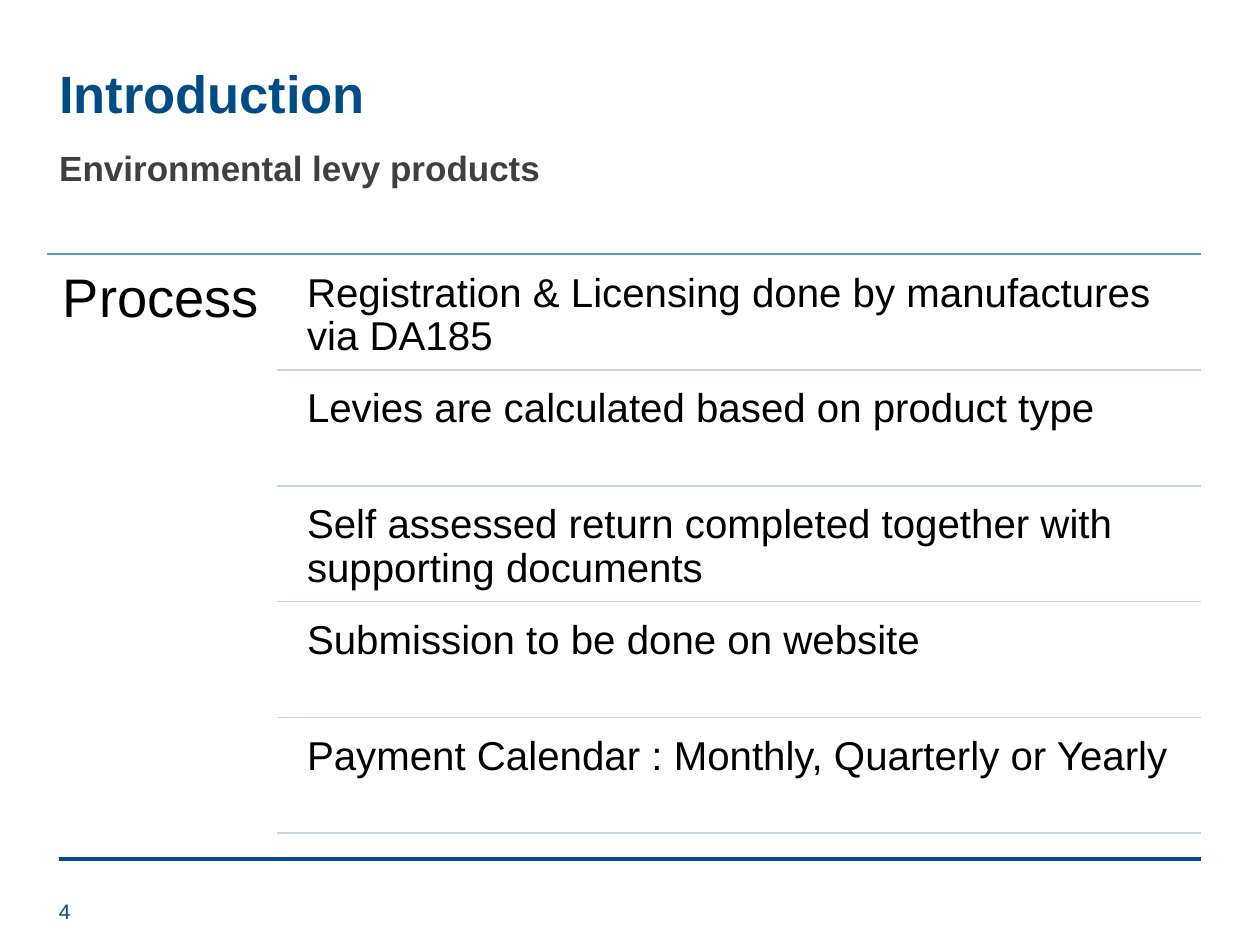
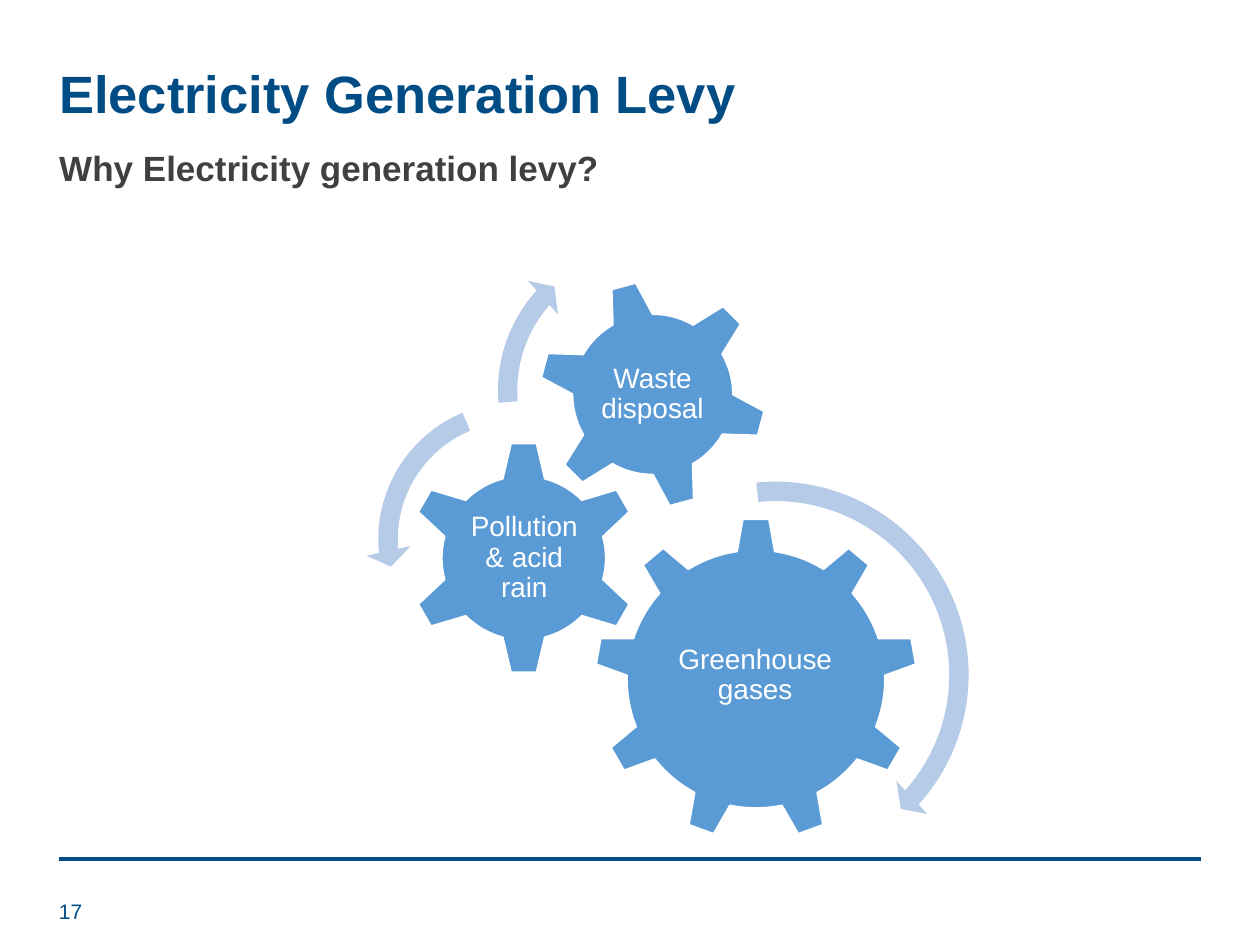
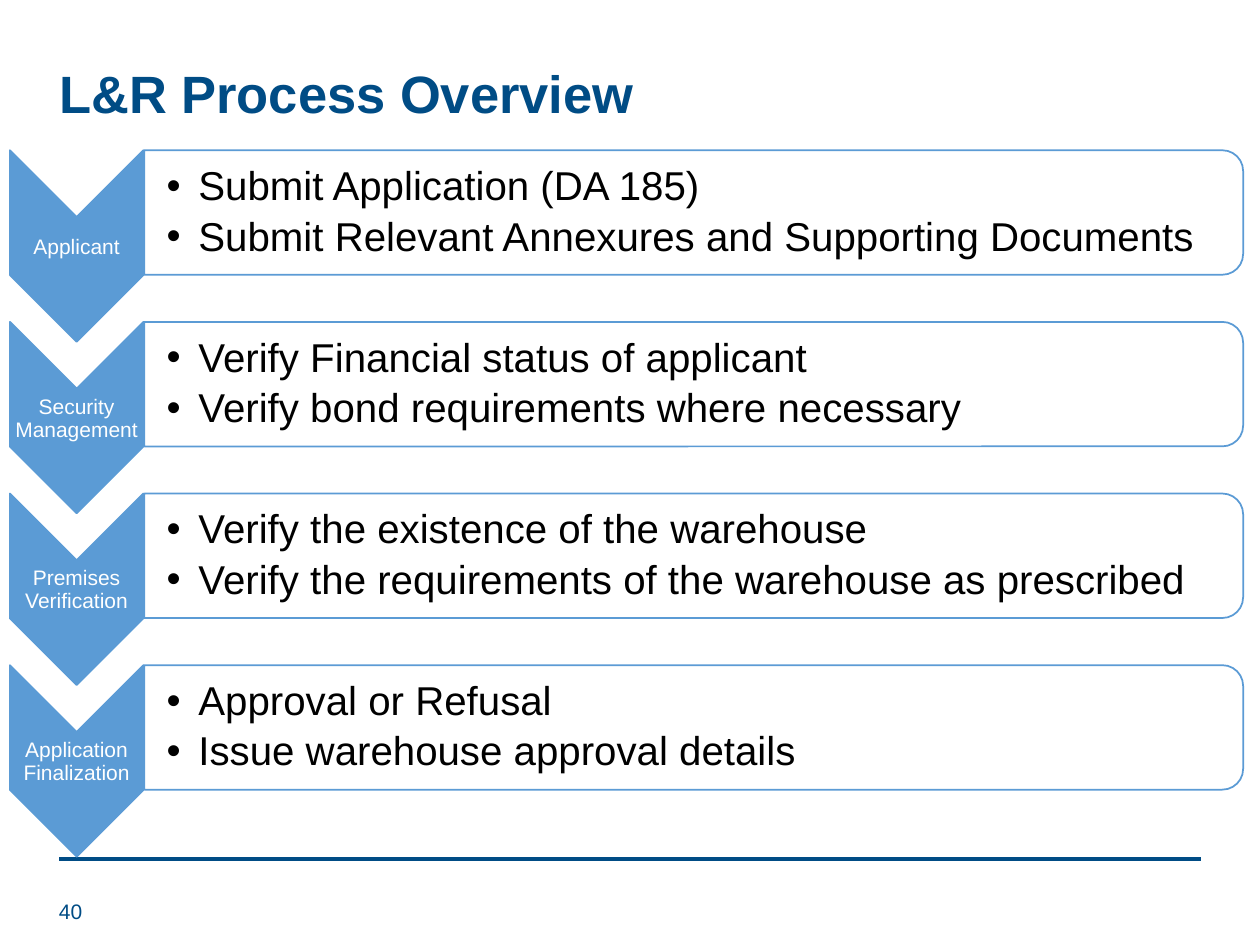
"""Build three slides on environmental levies: process list, gear diagram and chevron overview."""
from lxml import etree
from pptx import Presentation
from pptx.dml.color import RGBColor
from pptx.enum.shapes import MSO_CONNECTOR, MSO_SHAPE
from pptx.enum.text import MSO_ANCHOR, MSO_AUTO_SIZE, PP_ALIGN
from pptx.oxml.ns import qn
from pptx.util import Cm, Pt

STRAIGHT = MSO_CONNECTOR.STRAIGHT
GEAR_SIX, GEAR_NINE = MSO_SHAPE.GEAR_6, MSO_SHAPE.GEAR_9
ARROW_RIGHT, ARROW_LEFT = MSO_SHAPE.CIRCULAR_ARROW, MSO_SHAPE.LEFT_CIRCULAR_ARROW
CHEVRON, ROUNDED_TOP = MSO_SHAPE.CHEVRON, MSO_SHAPE.ROUND_2_SAME_RECTANGLE
TOP, MIDDLE = MSO_ANCHOR.TOP, MSO_ANCHOR.MIDDLE
LEFT, CENTER = PP_ALIGN.LEFT, PP_ALIGN.CENTER
NO_AUTOFIT = MSO_AUTO_SIZE.NONE

FONT = "Arial"
COLORS = {
    "navy": "004C85",
    "gray": "404040",
    "blue": "5B9BD5",
    "arrow": "B5CBE7",
    "rule": "C4D5EB",
    "black": "000000",
    "white": "FFFFFF",
}
MARGIN_LEFT, RULE_RIGHT = 0.94, 24.21
TITLE_LAYOUT, CONTENT_LAYOUT = 5, 1

PROCESS_STEPS = [
    "Registration & Licensing done by manufactures via DA185",
    "Levies are calculated based on product type",
    "Self assessed return completed together with supporting documents",
    "Submission to be done on website",
    "Payment Calendar : Monthly, Quarterly or Yearly",
]
GEARS = [
    (GEAR_NINE, (11.99, 10.44, 6.5), 0, "Greenhouse gases", (13.28, 11.96, 3.89, 3.33)),
    (GEAR_SIX, (8.2, 8.89, 4.72), 0, "Pollution & acid rain", (9.4, 10.08, 2.34, 2.34)),
    (GEAR_SIX, (10.85, 5.64, 4.62), 345, "Waste disposal", (11.86, 6.65, 2.59, 2.59)),
]
ARROWS = [
    (ARROW_RIGHT, (11.48, 9.45, 8.31), 4.7, (4.98, 41.96, 264.31), 5.5),
    (ARROW_LEFT, (7.37, 7.85, 6.05), 6.5, (7.17, 174.82, 247.3), 7.5),
    (ARROW_RIGHT, (9.78, 4.62, 6.5), 6, (6.57, 221.9, 175.14), 7),
]
STAGES = [
    ("Applicant", ["Submit Application (DA 185)",
                   "Submit Relevant Annexures and Supporting Documents"]),
    ("Security Management", ["Verify Financial status of applicant",
                             "Verify bond requirements where necessary"]),
    ("Premises Verification", ["Verify the existence of the warehouse",
                               "Verify the requirements of the warehouse as prescribed"]),
    ("Application Finalization", ["Approval or Refusal",
                                  "Issue warehouse approval details"]),
]


def color(name):
    return RGBColor.from_string(COLORS[name])


def place(shape, left, top, width, height):
    shape.left, shape.top = Cm(left), Cm(top)
    shape.width, shape.height = Cm(width), Cm(height)


def set_bullet(para, bullet):
    properties = para._p.get_or_add_pPr()
    indent = Cm(0.64) if bullet else 0
    properties.set("marL", str(indent))
    properties.set("indent", str(-indent))
    if bullet:
        etree.SubElement(properties, qn("a:buFont"), typeface=FONT)
        etree.SubElement(properties, qn("a:buChar"), char="•")
    else:
        etree.SubElement(properties, qn("a:buNone"))


def write(frame, lines, size, tint, bold=False, align=LEFT, anchor=TOP,
          bullet=False, spacing=0.9):
    frame.word_wrap = True
    frame.auto_size = NO_AUTOFIT
    frame.vertical_anchor = anchor
    for index, line in enumerate(lines):
        para = frame.add_paragraph() if index else frame.paragraphs[0]
        para.text = line
        set_bullet(para, bullet)
        para.alignment = align
        para.line_spacing = spacing
        para.space_before = Pt(0)
        para.space_after = Pt(4 if bullet else 0)
        para.font.name = FONT
        para.font.size = Pt(size)
        para.font.bold = bold
        para.font.color.rgb = color(tint)


def add_text(page, bounds, lines, size, tint, inset=None, **style):
    box = page.shapes.add_textbox(*map(Cm, bounds))
    frame = box.text_frame
    if inset is not None:
        frame.margin_left = frame.margin_right = Cm(inset)
        frame.margin_top = frame.margin_bottom = Cm(inset)
    write(frame, lines, size, tint, **style)
    return box


def add_rule(page, left, top, tint, width=1):
    rule = page.shapes.add_connector(STRAIGHT, Cm(left), Cm(top), Cm(RULE_RIGHT), Cm(top))
    rule.line.color.rgb = color(tint)
    rule.line.width = Pt(width)
    etree.SubElement(rule._element.spPr, qn("a:effectLst"))


def add_figure(page, kind, bounds, fill, outline=None):
    figure = page.shapes.add_shape(kind, *map(Cm, bounds))
    figure.shadow.inherit = False
    figure.fill.solid()
    figure.fill.fore_color.rgb = color(fill)
    if outline:
        figure.line.color.rgb = color(outline)
        figure.line.width = Pt(1)
    else:
        figure.line.fill.background()
    return figure


def add_turned_figure(page, kind, bounds, fill):
    """Add a shape turned by 90 degrees that covers the given bounds."""
    left, top, width, height = bounds
    shift = (width - height) / 2
    figure = add_figure(page, kind, (left + shift, top - shift, height, width), fill, "blue")
    figure.rotation = 90
    return figure


def set_opacity(figure, percent):
    fill_color = figure._element.spPr.find(qn("a:solidFill"))[0]
    etree.SubElement(fill_color, qn("a:alpha"), val=str(percent * 1000))


def add_page(deck, title, number, subtitle=None):
    layout = CONTENT_LAYOUT if subtitle else TITLE_LAYOUT
    page = deck.slides.add_slide(deck.slide_layouts[layout])
    add_rule(page, 1.19, 17.32, "navy", 2)
    heading = page.shapes.title
    place(heading, MARGIN_LEFT, 1.22, 21.89, 1.47)
    write(heading.text_frame, [title], 30, "navy", bold=True, anchor=MIDDLE)
    add_text(page, (MARGIN_LEFT, 17.86, 5.72, 1.02), [number], 12, "navy",
             anchor=MIDDLE, spacing=1.0)
    if subtitle:
        body = page.placeholders[1]
        place(body, MARGIN_LEFT, 2.92, 21.89, 1.22)
        write(body.text_frame, [subtitle], 20, "gray", bold=True)
    return page


def add_process_list(page):
    top, bottom = 5.12, 16.8
    pitch = (bottom - top) / len(PROCESS_STEPS)
    add_rule(page, MARGIN_LEFT, top, "blue")
    add_text(page, (MARGIN_LEFT, top, 4.65, bottom - top), ["Process"], 31, "black", inset=0.33)
    for index, step in enumerate(PROCESS_STEPS):
        row_top = top + index * pitch
        add_text(page, (5.94, row_top + 0.12, 18.26, 2.24), [step], 23, "black", inset=0.25)
        add_rule(page, 5.59, row_top + pitch, "rule")


def add_gear(page, kind, corner_size, rotation, label, label_bounds):
    left, top, size = corner_size
    gear = add_figure(page, kind, (left, top, size, size), "blue", "white")
    gear.rotation = rotation
    add_text(page, label_bounds, [label], 16, "white", inset=0.05, align=CENTER, anchor=MIDDLE)


def add_turn_arrow(page, kind, corner_size, thickness, degrees, head):
    """Add a circular arrow; thickness and head are percentages of its size."""
    left, top, size = corner_size
    arrow = add_figure(page, kind, (left, top, size, size), "arrow")
    values = [thickness / 100, *(angle * 0.6 for angle in degrees), head / 100]
    for index, value in enumerate(values):
        arrow.adjustments[index] = value


def add_stage(page, top, label, tasks):
    add_turned_figure(page, CHEVRON, (0.2, top, 2.69, 3.86), "blue")
    add_text(page, (0.2, top + 1.37, 2.69, 1.17), [label], 12, "white",
             inset=0.03, align=CENTER, anchor=MIDDLE)
    panel = add_turned_figure(page, ROUNDED_TOP, (2.91, top, 22.15, 2.51), "white")
    set_opacity(panel, 90)
    box = add_text(page, (2.9, top + 0.13, 22.05, 2.26), tasks, 23, "black",
                   inset=0.05, anchor=MIDDLE, bullet=True)
    box.text_frame.margin_left = Cm(0.46)


def main():
    deck = Presentation()
    deck.slide_width, deck.slide_height = Cm(25.4), Cm(19.05)

    add_process_list(add_page(deck, "Introduction", "4", "Environmental levy products"))

    page = add_page(deck, "Electricity Generation Levy", "17", "Why Electricity generation levy?")
    for gear in GEARS:
        add_gear(page, *gear)
    for arrow in ARROWS:
        add_turn_arrow(page, *arrow)

    page = add_page(deck, "L&R Process Overview", "40")
    for index, (label, tasks) in enumerate(STAGES):
        add_stage(page, 3.03 + index * 3.46, label, tasks)

    deck.save("out.pptx")


if __name__ == "__main__":
    main()
